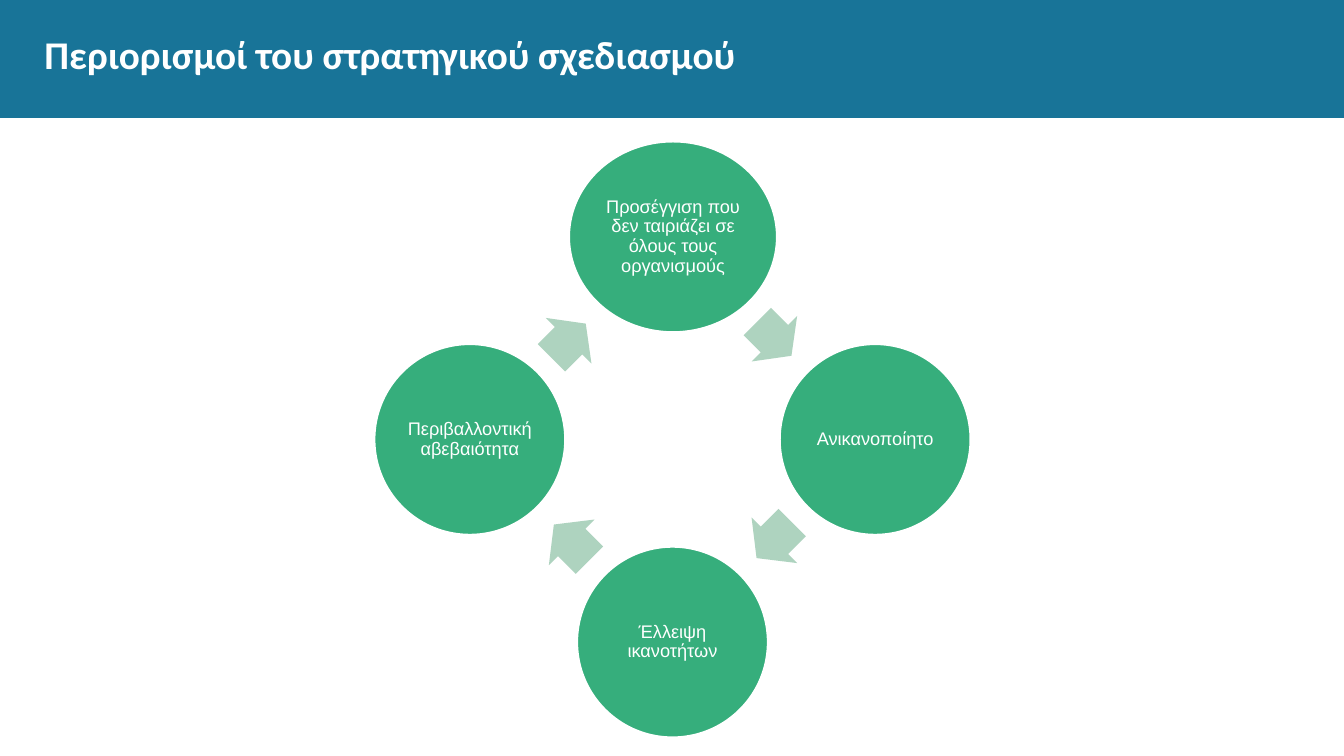
"""Build a slide with a four-step cycle of strategic planning limits."""
import math
from dataclasses import dataclass

import pptx
import pptx.dml.color
import pptx.enum.shapes
import pptx.enum.text
import pptx.util

PX = 9144


@dataclass(frozen=True)
class Theme:
    band: str = "187498"
    circle: str = "36AE7C"
    arrow: str = "AED3BF"
    light: str = "FFFFFF"
    title_font: str = "Calibri"
    body_font: str = "Arial"
    title_size: int = 28
    body_size: int = 13
    outline: int = 2


@dataclass(frozen=True)
class Box:
    x: int
    y: int
    w: int
    h: int


@dataclass(frozen=True)
class Step:
    text: str
    width: int
    arrow: Box


THEME = Theme()
SLIDE = Box(0, 0, 1333, 750)
BAND = Box(0, 0, 1333, 117)
TITLE = Box(44, 19, 1246, 74)
CENTER_X, CENTER_Y, RING = 667, 436, 201
DIAMETER = 190
INSET = 2
STEPS = [
    Step("Προσέγγιση που δεν ταιριάζει σε όλους τους οργανισμούς", 207,
         Box(744, 304, 48, 64)),
    Step("Ανικανοποίητο", DIAMETER, Box(743, 504, 50, 64)),
    Step("Έλλειψη ικανοτήτων", DIAMETER, Box(542, 506, 50, 64)),
    Step("Περιβαλλοντική αβεβαιότητα", DIAMETER, Box(540, 306, 48, 64)),
]


def rgb(value: str) -> pptx.dml.color.RGBColor:
    """Turn a hex string into a colour."""
    return pptx.dml.color.RGBColor.from_string(value)


def place(sp, box: Box) -> None:
    """Move and size a shape."""
    sp.left, sp.top = box.x * PX, box.y * PX
    sp.width, sp.height = box.w * PX, box.h * PX


def add_shape(s, kind, box: Box, fill: str):
    """Add a filled preset shape without outline or shadow."""
    sp = s.shapes.add_shape(kind, box.x * PX, box.y * PX, box.w * PX, box.h * PX)
    sp.shadow.inherit = False
    sp.fill.solid()
    sp.fill.fore_color.rgb = rgb(fill)
    sp.line.fill.background()
    return sp


def set_text(sp, text: str, font: str, size: int, bold: bool, align, inset: int) -> None:
    """Write one paragraph of light text, centred vertically."""
    tf = sp.text_frame
    tf.text = text
    tf.word_wrap = True
    tf.auto_size = pptx.enum.text.MSO_AUTO_SIZE.NONE
    tf.vertical_anchor = pptx.enum.text.MSO_ANCHOR.MIDDLE
    tf.margin_left = tf.margin_right = tf.margin_top = tf.margin_bottom = inset * PX
    p = tf.paragraphs[0]
    p.alignment = align
    p.line_spacing = 0.9
    r = p.runs[0]
    r.font.name = font
    r.font.size = pptx.util.Pt(size)
    r.font.bold = bold
    r.font.color.rgb = rgb(THEME.light)


def add_title(s, text: str) -> None:
    """Put the title on a full-width band."""
    sp = s.shapes.title
    place(sp, TITLE)
    set_text(sp, text, THEME.title_font, THEME.title_size, True,
             pptx.enum.text.PP_ALIGN.LEFT, 0)
    band = add_shape(s, pptx.enum.shapes.MSO_SHAPE.RECTANGLE, BAND, THEME.band)
    sp.element.addprevious(band.element)


def add_step(s, step: Step, index: int) -> None:
    """Draw one circle of the ring and the arrow to the next."""
    angle = math.radians(90 * index)
    x = CENTER_X + round(RING * math.sin(angle))
    y = CENTER_Y - round(RING * math.cos(angle))
    box = Box(x - step.width // 2, y - DIAMETER // 2, step.width, DIAMETER)
    sp = add_shape(s, pptx.enum.shapes.MSO_SHAPE.OVAL, box, THEME.circle)
    sp.line.color.rgb = rgb(THEME.light)
    sp.line.width = pptx.util.Pt(THEME.outline)
    set_text(sp, step.text, THEME.body_font, THEME.body_size, False,
             pptx.enum.text.PP_ALIGN.CENTER, INSET)
    arrow = add_shape(s, pptx.enum.shapes.MSO_SHAPE.RIGHT_ARROW, step.arrow, THEME.arrow)
    arrow.adjustments[0], arrow.adjustments[1] = 0.6, 0.5
    arrow.rotation = 45 + 90 * index


def main() -> None:
    """Build and save the presentation."""
    prs = pptx.Presentation()
    prs.slide_width, prs.slide_height = SLIDE.w * PX, SLIDE.h * PX
    s = prs.slides.add_slide(prs.slide_layouts[5])
    add_title(s, "Περιορισμοί του στρατηγικού σχεδιασμού")
    for index, step in enumerate(STEPS):
        add_step(s, step, index)
    prs.save("out.pptx")


if __name__ == "__main__":
    main()
